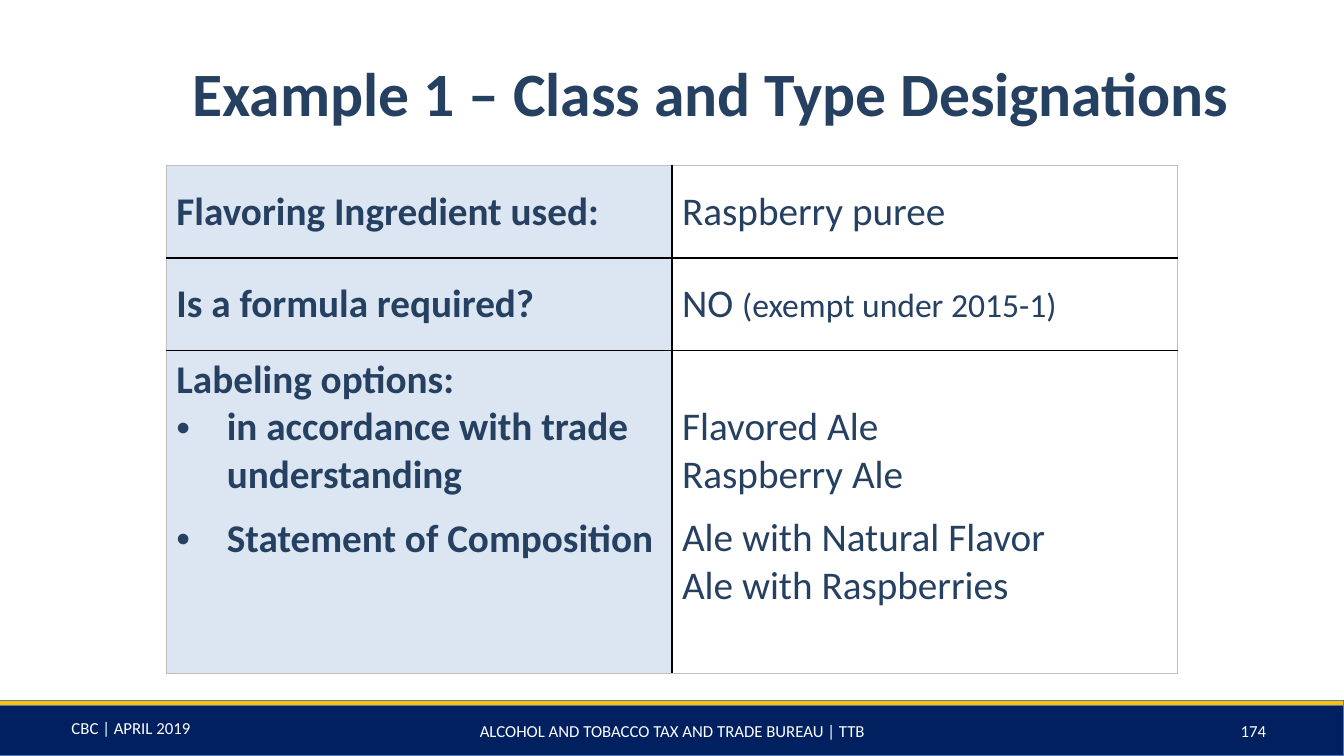
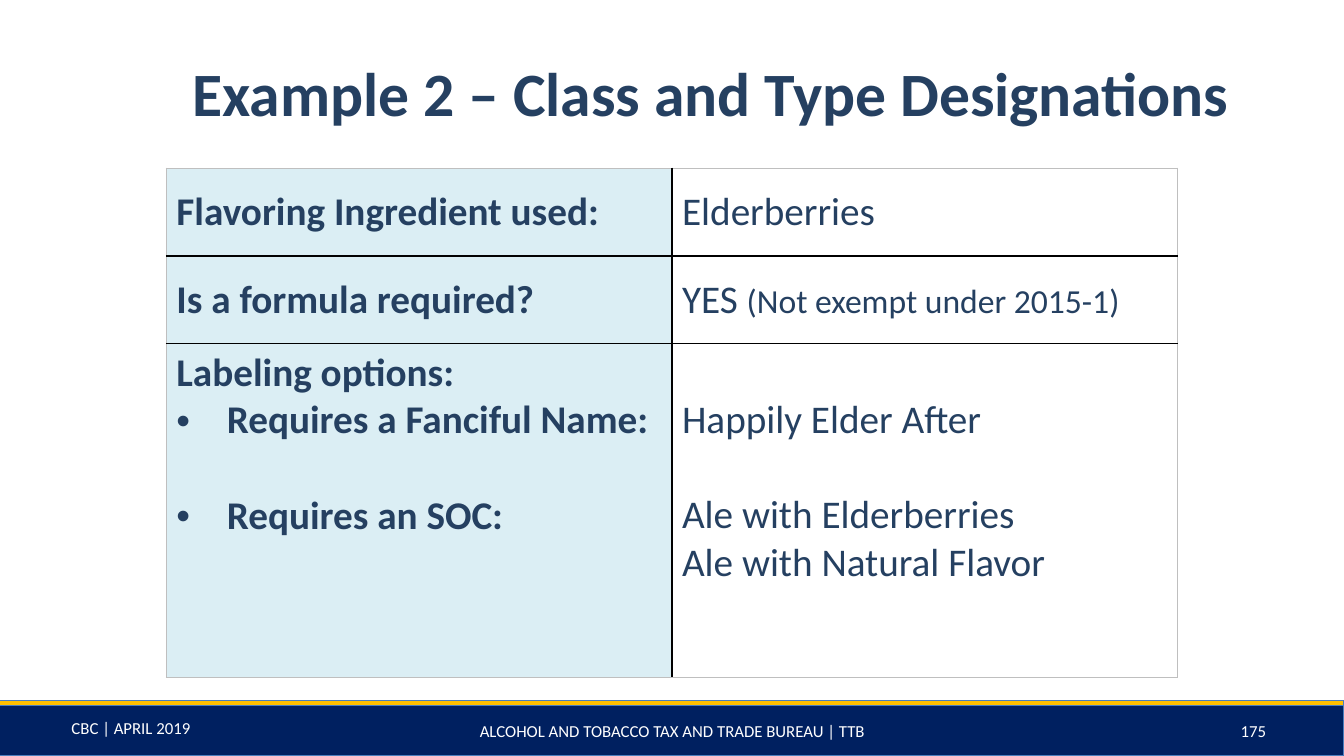
import pptx
import pptx.util
import pptx.dml.color
import pptx.enum.shapes
import pptx.enum.text
import pptx.oxml.ns
from lxml import etree

Inches = pptx.util.Inches
Pt = pptx.util.Pt
ALIGN = pptx.enum.text.PP_ALIGN
ANCHOR = pptx.enum.text.MSO_ANCHOR
COLORS = {"navy": "002060", "gold": "FFC000", "edge": "4B7EBC", "text": "254061",
          "white": "FFFFFF", "grid": "000000", "frame": "BFBFBF",
          "blue": "DCE6F2", "aqua": "DBEEF4"}


def rgb(name):
    """Return the named colour."""
    return pptx.dml.color.RGBColor.from_string(COLORS[name])


def child(parent, tag, **attrs):
    """Append a drawing element with attributes."""
    return etree.SubElement(parent, pptx.oxml.ns.qn("a:" + tag), **attrs)


class Deck:
    """Hold the style and the current slide."""

    title_font = {"size": Pt(44), "bold": True}
    label_font = {"size": Pt(28), "bold": True}
    value_font = {"size": Pt(28), "bold": False}
    note_font = {"size": Pt(24), "bold": False}
    footer_font = {"size": Pt(12), "bold": False}

    def __init__(self):
        """Start a widescreen presentation."""
        self.prs = pptx.Presentation()
        self.prs.slide_width, self.prs.slide_height = Inches(13.33), Inches(7.5)

    def slide(self, title, number):
        """Add a slide with its title, bands and footers."""
        self.s = self.prs.slides.add_slide(self.prs.slide_layouts[5])
        self.band(0.55, "navy")
        self.band(0.05, "gold")
        self.title(title)
        self.footer("CBC | APRIL 2019", 0.02, 7.07, 2.56, 0.3, ANCHOR.TOP)
        self.footer("ALCOHOL AND TOBACCO TAX AND TRADE BUREAU | TTB", 3.56, 7.05, 6.22, 0.4)
        self.footer(str(number), 11.54, 7.05, 1.78, 0.4)

    def band(self, height, color):
        """Draw a full-width footer band."""
        sp = self.s.shapes.add_shape(pptx.enum.shapes.MSO_SHAPE.RECTANGLE, 0, Inches(6.95),
                                     self.prs.slide_width, Inches(height))
        sp.shadow.inherit = False
        sp.fill.solid()
        sp.fill.fore_color.rgb = rgb(color)
        sp.line.color.rgb = rgb("edge")
        sp.line.width = Pt(0.75)

    def run(self, p, text, fmt, color="text"):
        """Add a formatted run."""
        r = p.add_run()
        r.text = text
        for name, value in {"name": "Calibri", **fmt}.items():
            setattr(r.font, name, value)
        r.font.color.rgb = rgb(color)

    def title(self, text):
        """Fill and place the title placeholder."""
        sp = self.s.shapes.title
        box = {"left": 1.81, "top": 0.5, "width": 10.86, "height": 0.83}
        for name, value in box.items():
            setattr(sp, name, Inches(value))
        tf = sp.text_frame
        tf.auto_size = pptx.enum.text.MSO_AUTO_SIZE.NONE
        tf.vertical_anchor = ANCHOR.MIDDLE
        p = tf.paragraphs[0]
        p.alignment = ALIGN.LEFT
        self.run(p, text, self.title_font)

    def footer(self, text, left, top, width, height, anchor=ANCHOR.MIDDLE):
        """Add a centred footer text."""
        sp = self.s.shapes.add_textbox(*map(Inches, (left, top, width, height)))
        tf = sp.text_frame
        tf.word_wrap = True
        tf.vertical_anchor = anchor
        p = tf.paragraphs[0]
        p.alignment = ALIGN.CENTER
        self.run(p, text, self.footer_font, "white")

    def cell(self, cell, sides, fill=None, anchor=ANCHOR.MIDDLE):
        """Set the borders, fill and anchor of a cell."""
        tcPr = cell._tc.get_or_add_tcPr()
        for side, color in sides.items():
            ln = child(tcPr, "ln" + side, w=str(Pt(1)))
            child(child(ln, "solidFill"), "srgbClr", val=COLORS[color])
        if fill:
            cell.fill.solid()
            cell.fill.fore_color.rgb = rgb(fill)
        else:
            cell.fill.background()
        cell.vertical_anchor = anchor

    def bullet(self, p):
        """Give a paragraph a hanging bullet."""
        pPr = p._p.get_or_add_pPr()
        pPr.set("marL", str(Inches(0.5)))
        pPr.set("indent", str(-Inches(0.5)))
        child(pPr, "buFont", typeface="Arial")
        child(pPr, "buChar", char="•")

    def table(self, top, heights, fill, ingredient, formula, options, gap):
        """Add the designation table; each option pairs a label with its values."""
        shape = self.s.shapes.add_table(3, 2, Inches(1.65), Inches(top),
                                        Inches(10.03), Inches(sum(heights)))
        table = shape.table
        table.first_row = table.horz_banding = False
        for row, height in zip(table.rows, heights):
            row.height = Inches(height)
        for i in range(3):
            anchor = ANCHOR.TOP if i == 2 else ANCHOR.MIDDLE
            for j in range(2):
                sides = {"L": "grid" if j else "frame", "R": "frame" if j else "grid",
                         "T": "grid" if i else "frame", "B": "frame" if i == 2 else "grid"}
                self.cell(table.cell(i, j), sides, None if j else fill, anchor)
        labels = ("Flavoring Ingredient used:", "Is a formula required?", "Labeling options:")
        for i, label in enumerate(labels):
            self.run(table.cell(i, 0).text_frame.paragraphs[0], label, self.label_font)
        self.run(table.cell(0, 1).text_frame.paragraphs[0], ingredient, self.value_font)
        answer, note = formula
        p = table.cell(1, 1).text_frame.paragraphs[0]
        self.run(p, answer + " ", self.value_font)
        self.run(p, note, self.note_font)
        self.options(table.cell(2, 0), table.cell(2, 1), options, gap)

    def options(self, left, right, options, gap):
        """List the labeling options beside their values."""
        right.margin_top = Inches(0.52)
        for i, (label, values) in enumerate(options):
            p = left.text_frame.add_paragraph()
            self.bullet(p)
            p.space_before = Pt(gap if i else 0)
            self.run(p, label, self.label_font)
            for j, value in enumerate(values):
                tf = right.text_frame
                p = tf.add_paragraph() if i or j else tf.paragraphs[0]
                p.space_before = Pt(gap if i and not j else 0)
                self.run(p, value, self.value_font)


def main():
    """Build and save the slides."""
    d = Deck()
    d.slide("Example 1 – Class and Type Designations", 174)
    d.table(1.64, (0.92, 0.92, 3.2), "blue", "Raspberry puree",
            ("NO", "(exempt under 2015-1)"),
            [("in accordance with trade understanding", ["Flavored Ale", "Raspberry Ale"]),
             ("Statement of Composition", ["Ale with Natural Flavor", "Ale with Raspberries"])],
            11)
    d.slide("Example 2 – Class and Type Designations", 175)
    d.table(1.67, (0.87, 0.87, 3.31), "aqua", "Elderberries",
            ("YES", "(Not exempt under 2015-1)"),
            [("Requires a Fanciful Name:", ["Happily Elder After"]),
             ("Requires an SOC:", ["Ale with Elderberries", "Ale with Natural Flavor"])],
            34)
    d.prs.save("out.pptx")


if __name__ == "__main__":
    main()
